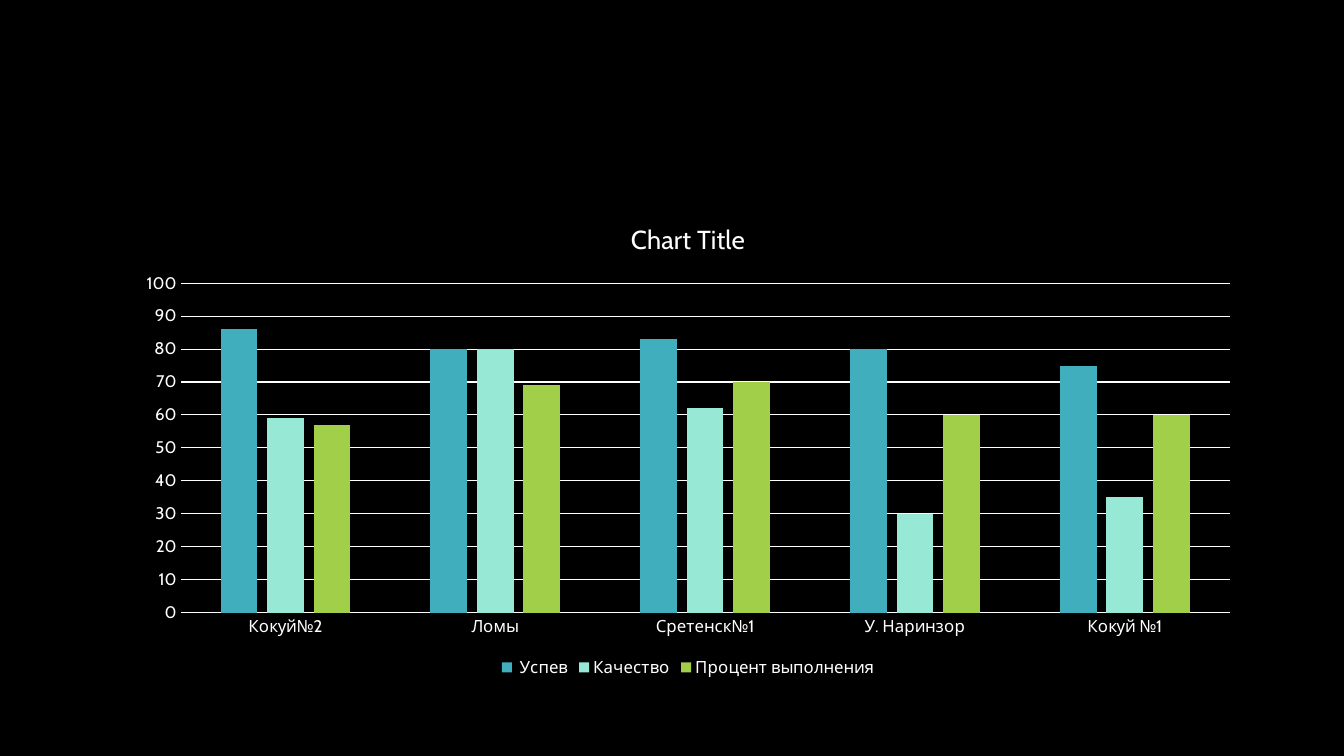
from pptx import Presentation
from pptx import util as u
from pptx.chart.data import CategoryChartData
from pptx.dml.color import RGBColor
from pptx.enum import chart as c

BLACK = RGBColor(0x00, 0x00, 0x00)
WHITE = RGBColor(0xFF, 0xFF, 0xFF)
TEAL = RGBColor(0x41, 0xAE, 0xBD)
MINT = RGBColor(0x97, 0xE9, 0xD5)
GREEN = RGBColor(0xA2, 0xCF, 0x49)
FONT = "Cabin"

TITLE = "Chart Title"
SCHOOLS = ["Кокуй№2", "Ломы", "Сретенск№1", "У. Наринзор", "Кокуй №1"]
RESULTS = [
    (" Успев", TEAL, (86, 80, 83, 80, 75)),
    ("Качество", MINT, (59, 80, 62, 30, 35)),
    ("Процент выполнения", GREEN, (57, 69, 70, 60, 60)),
]
CHART_AREA = (1.23, 2, 11.19, 4.76)


def style_font(font, size):
    font.name = FONT
    font.size = u.Pt(size)
    font.bold = False
    font.color.rgb = WHITE


def style_line(line):
    line.color.rgb = WHITE
    line.width = u.Pt(0.75)


def style_axis(axis):
    axis.major_tick_mark = axis.minor_tick_mark = c.XL_TICK_MARK.NONE
    style_font(axis.tick_labels.font, 12)


deck = Presentation()
deck.slide_width, deck.slide_height = u.Inches(13.33), u.Inches(7.5)
page = deck.slides.add_slide(deck.slide_layouts[6])
page.background.fill.solid()
page.background.fill.fore_color.rgb = BLACK

data = CategoryChartData()
data.categories = SCHOOLS
for name, _, values in RESULTS:
    data.add_series(name, values)
chart = page.shapes.add_chart(
    c.XL_CHART_TYPE.COLUMN_CLUSTERED, *map(u.Inches, CHART_AREA), data
).chart
style_font(chart.font, 10)

chart.has_title = True
span = chart.chart_title.text_frame.paragraphs[0].add_run()
span.text = TITLE
style_font(span.font, 18.6)
chart.chart_title.include_in_layout = False

chart.has_legend = True
chart.legend.position = c.XL_LEGEND_POSITION.BOTTOM
chart.legend.include_in_layout = False
style_font(chart.legend.font, 12)

style_axis(chart.category_axis)
style_line(chart.category_axis.format.line)

scale = chart.value_axis
style_axis(scale)
scale.minimum_scale, scale.maximum_scale, scale.major_unit = 0, 100, 10
scale.format.line.fill.background()
scale.has_major_gridlines = True
style_line(scale.major_gridlines.format.line)

plot = chart.plots[0]
plot.vary_by_categories = False
plot.gap_width, plot.overlap = 219, -27
for series, (_, color, _) in zip(plot.series, RESULTS):
    series.format.fill.solid()
    series.format.fill.fore_color.rgb = color

deck.save("out.pptx")
